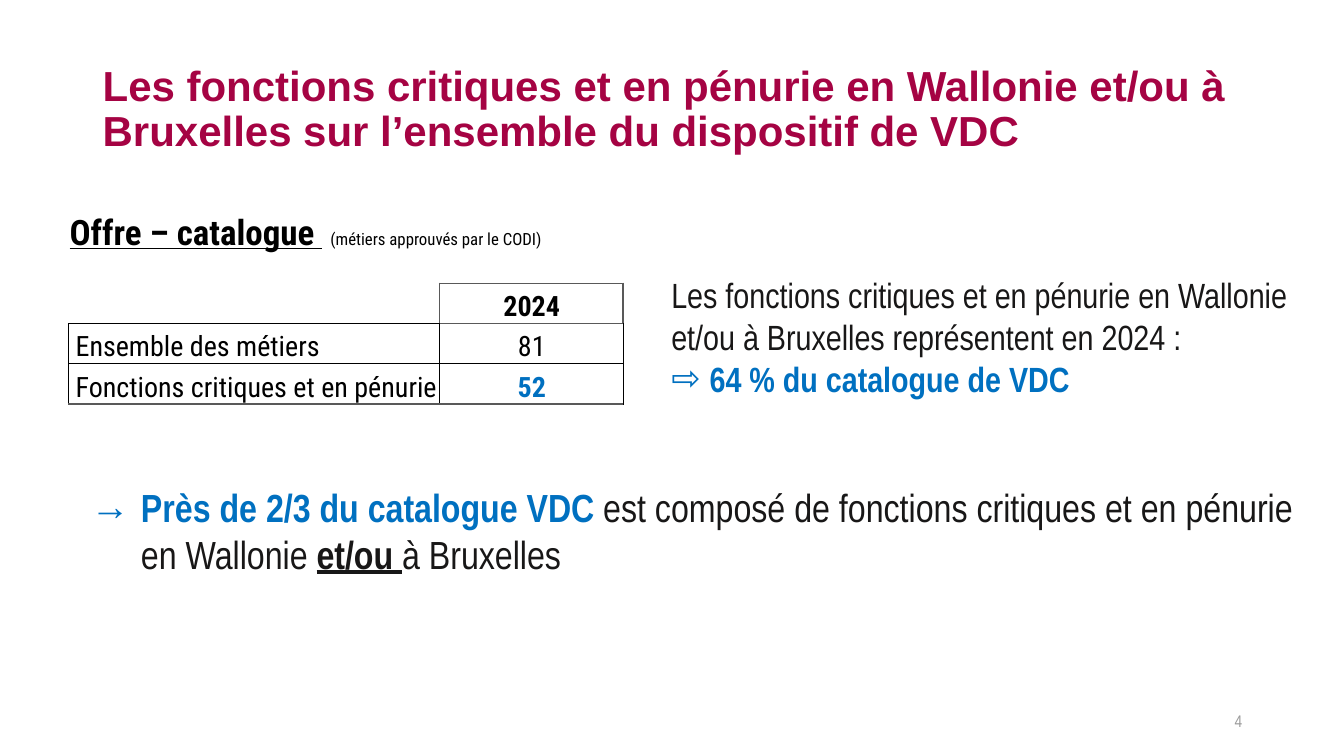
from dataclasses import dataclass

from lxml.etree import SubElement
from pptx import Presentation
from pptx.dml.color import RGBColor
from pptx.enum.text import MSO_ANCHOR, PP_ALIGN
from pptx.oxml.ns import qn
from pptx.util import Inches, Pt


@dataclass(frozen=True)
class Theme:
    title_font: str = "Arial"
    body_font: str = "Arial Narrow"
    table_font: str = "Roboto Condensed"
    crimson: str = "A50343"
    blue: str = "0070C0"
    ink: str = "181717"
    black: str = "000000"
    border_gray: str = "595959"
    number_gray: str = "9B9B9B"
    title_size: int = 30
    message_size: int = 28
    body_size: int = 25
    table_size: int = 20
    small_size: int = 12


THEME = Theme()
THIN = (THEME.black, 0.5)
GRAY = (THEME.border_gray, 1)


def add_span(para, text, font, size, color, bold=False, underline=False):
    span = para.add_run()
    span.text = text
    span.font.name = font
    span.font.size = Pt(size)
    span.font.color.rgb = RGBColor.from_string(color)
    span.font.bold = bold
    span.font.underline = underline


def add_text_frame(page, box, anchor=MSO_ANCHOR.TOP):
    frame = page.shapes.add_textbox(*map(Inches, box)).text_frame
    frame.word_wrap = True
    frame.vertical_anchor = anchor
    return frame


def set_bullet(para, character, indent):
    properties = para._p.get_or_add_pPr()
    properties.set("marL", str(Inches(indent)))
    properties.set("indent", str(-Inches(indent)))
    SubElement(properties, qn("a:buFont"), typeface="Arial")
    SubElement(properties, qn("a:buChar"), char=character)


def style_cell(cell, borders):
    """Borders map the sides L, R, T and B to (colour, points); other sides stay bare."""
    properties = cell._tc.get_or_add_tcPr()
    for side in "LRTB":
        line = SubElement(properties, qn(f"a:ln{side}"))
        if side in borders:
            color, points = borders[side]
            line.set("w", str(Pt(points)))
            fill = SubElement(line, qn("a:solidFill"))
            SubElement(fill, qn("a:srgbClr"), val=color)
        else:
            SubElement(line, qn("a:noFill"))
    cell.fill.background()
    cell.vertical_anchor = MSO_ANCHOR.BOTTOM
    cell.margin_left = cell.margin_top = Inches(0.01)
    cell.margin_right = cell.margin_bottom = 0


def add_title(page, box):
    para = add_text_frame(page, box, MSO_ANCHOR.MIDDLE).paragraphs[0]
    para.line_spacing = 0.9
    add_span(para, "Les fonctions critiques et en pénurie en Wallonie et/ou à "
             "Bruxelles sur l’ensemble du dispositif de VDC",
             THEME.title_font, THEME.title_size, THEME.crimson, bold=True)


def add_catalogue_table(page, box):
    heading_height, label_width = 0.71, 3.68
    left, top, width, height = box
    table = page.shapes.add_table(4, 2, *map(Inches, box)).table
    table.first_row = table.horz_banding = False
    table.columns[0].width = Inches(label_width)
    table.columns[1].width = Inches(width - label_width)
    for index, row in enumerate(table.rows):
        row.height = Inches((height - heading_height) / 3 if index else heading_height)

    heading = table.cell(0, 0)
    heading.merge(table.cell(0, 1))
    style_cell(heading, {})
    heading.vertical_anchor = MSO_ANCHOR.TOP
    para = heading.text_frame.paragraphs[0]
    font = THEME.table_font
    add_span(para, "Offre – catalogue ", font, THEME.body_size, THEME.black, True, True)
    add_span(para, " ", font, THEME.body_size, THEME.black)
    add_span(para, "(métiers approuvés par le CODI)", font, THEME.small_size, THEME.black)

    all_thin = dict.fromkeys("LRTB", THIN)
    all_gray = dict.fromkeys("LRTB", GRAY)
    rows = [
        ("", {"R": GRAY, "B": THIN}, "2024", all_gray, THEME.black, True),
        ("Ensemble des métiers", all_thin, "81", all_thin | {"T": GRAY}, THEME.black, False),
        ("Fonctions critiques et en pénurie", all_thin | {"B": GRAY},
         "52", all_thin | {"B": GRAY}, THEME.blue, True),
    ]
    for index, (label, label_borders, value, value_borders, color, bold) in enumerate(rows, 1):
        label_cell, value_cell = table.cell(index, 0), table.cell(index, 1)
        style_cell(label_cell, label_borders)
        style_cell(value_cell, value_borders)
        label_cell.margin_left = Inches(0.07)
        if label:
            add_span(label_cell.text_frame.paragraphs[0], label,
                     font, THEME.table_size, THEME.black)
        para = value_cell.text_frame.paragraphs[0]
        para.alignment = PP_ALIGN.CENTER
        add_span(para, value, font, THEME.table_size, color, bold)


def add_share_comment(page, box):
    frame = add_text_frame(page, box)
    add_span(frame.paragraphs[0], "Les fonctions critiques et en pénurie en Wallonie "
             "et/ou à Bruxelles représentent en 2024 :",
             THEME.body_font, THEME.body_size, THEME.ink)
    para = frame.add_paragraph()
    set_bullet(para, "⇨", 0.38)
    add_span(para, "64 % du catalogue de VDC",
             THEME.body_font, THEME.body_size, THEME.blue, bold=True)


def add_key_message(page, box):
    para = add_text_frame(page, box).paragraphs[0]
    set_bullet(para, "→", 0.5)
    for text, color, bold, underline in [
        ("Près de 2/3 du catalogue VDC ", THEME.blue, True, False),
        ("est composé de fonctions critiques et en pénurie en Wallonie ",
         THEME.ink, False, False),
        ("et/ou ", THEME.ink, True, True),
        ("à Bruxelles", THEME.ink, False, False),
    ]:
        add_span(para, text, THEME.body_font, THEME.message_size, color, bold, underline)


def add_page_number(page, box):
    para = add_text_frame(page, box, MSO_ANCHOR.MIDDLE).paragraphs[0]
    para.alignment = PP_ALIGN.RIGHT
    add_span(para, "4", THEME.body_font, THEME.small_size, THEME.number_gray)


def main():
    deck = Presentation()
    deck.slide_width, deck.slide_height = Inches(13.33), Inches(7.5)
    page = deck.slides.add_slide(deck.slide_layouts[6])
    add_title(page, (0.92, 0.37, 11.5, 1.45))
    add_catalogue_table(page, (0.68, 2.1, 5.5, 1.91))
    add_share_comment(page, (6.56, 2.66, 6.46, 1.36))
    add_page_number(page, (9.42, 6.95, 3, 0.4))
    add_key_message(page, (0.8, 4.75, 12.22, 1.04))
    deck.save("out.pptx")


if __name__ == "__main__":
    main()
